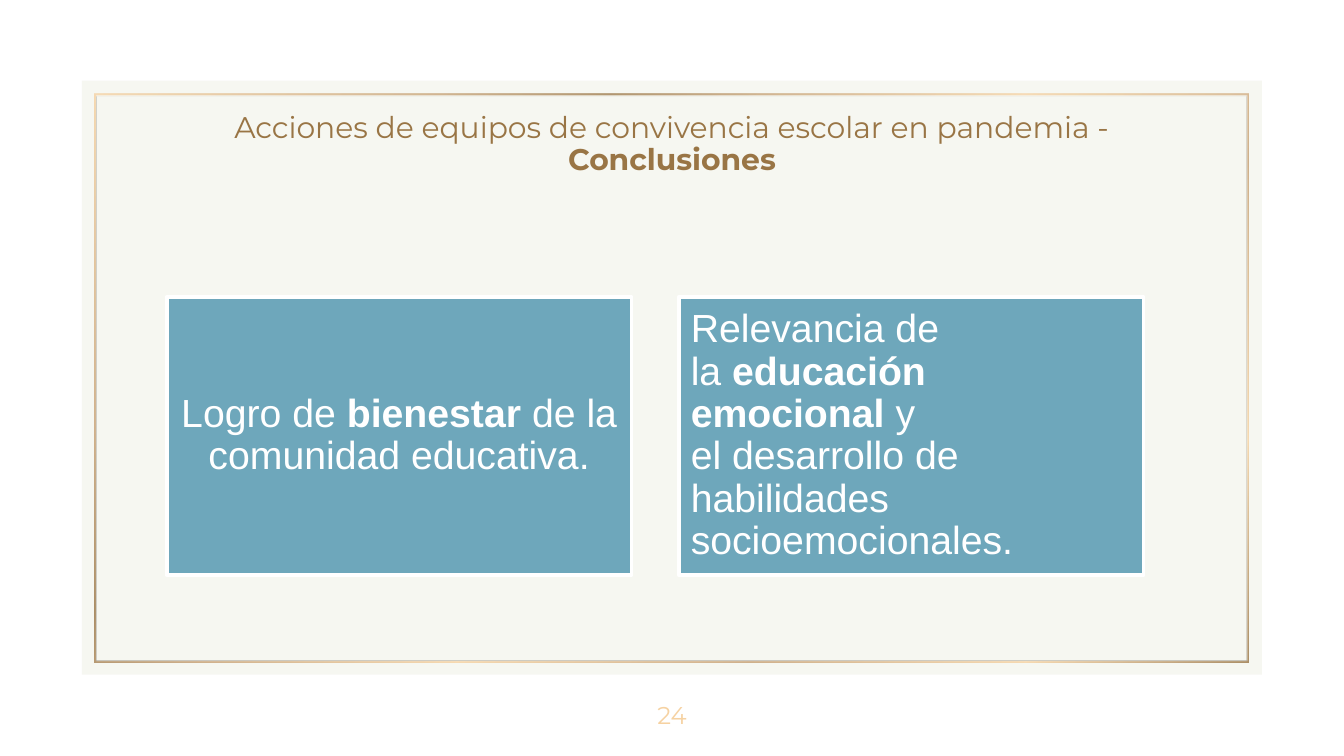
from lxml import etree
from pptx import Presentation
from pptx.dml.color import RGBColor
from pptx.enum.shapes import MSO_SHAPE
from pptx.enum.text import MSO_ANCHOR, PP_ALIGN
from pptx.oxml.ns import qn
from pptx.util import Inches, Pt

RECTANGLE, FRAME = MSO_SHAPE.RECTANGLE, MSO_SHAPE.FRAME
LEFT, CENTER = PP_ALIGN.LEFT, PP_ALIGN.CENTER
MIDDLE = MSO_ANCHOR.MIDDLE
NBSP = chr(160)  # no-break space, keeps short words with their neighbour

COLORS = {
    "panel": "F5F6F0",
    "light_gold": "F6D2A2",
    "gold": "C59F72",
    "dark_gold": "997545",
    "card": "6EA7BB",
    "white": "FFFFFF",
}

# Content: each run is (text, bold)
TITLE = [("Acciones de equipos de convivencia escolar en pandemia - ", False),
         ("Conclusiones", True)]
PAGE_NUMBER = [("24", False)]
CONCLUSIONS = [
    (CENTER, [(f"Logro de{NBSP}", False), (f"bienestar{NBSP}", True),
              ("de la comunidad educativa.", False)]),
    (LEFT, [(f"Relevancia de la{NBSP}", False),
            (f"educación emocional{NBSP}", True),
            (f"y el{NBSP}desarrollo de habilidades socioemocionales.", False)]),
]
GOLD_STOPS = [(0, "light_gold"), (20, "gold"), (30, "dark_gold"), (39, "gold"),
              (54, "light_gold"), (71, "gold"), (87, "light_gold"),
              (100, "dark_gold")]

# Layout in inches, on a 16:9 slide
SLIDE_WIDTH = 10
SLIDE_HEIGHT = SLIDE_WIDTH * 9 / 16
CARD_LEFT, CARD_TOP, CARD_WIDTH, CARD_HEIGHT = 1.24, 2.21, 3.46, 2.07
CARD_GAP = 0.35


def add_color(parent, name, opacity):
    color = etree.SubElement(parent, qn("a:srgbClr"), val=COLORS[name])
    etree.SubElement(color, qn("a:alpha"), val=str(opacity * 1000))


def add_block(slide, kind, box, fill=None):
    block = slide.shapes.add_shape(kind, *map(Inches, box))
    block.shadow.inherit = False
    block.line.fill.background()
    if fill:
        block.fill.solid()
        block.fill.fore_color.rgb = RGBColor.from_string(COLORS[fill])
    return block


def write_text(frame, runs, *, size, font, color, align=CENTER, spacing=None,
               margin=0):
    frame.word_wrap = True
    frame.vertical_anchor = MIDDLE
    frame.margin_left = frame.margin_right = Inches(margin)
    frame.margin_top = frame.margin_bottom = Inches(margin)
    paragraph = frame.paragraphs[0]
    paragraph.alignment = align
    paragraph.line_spacing = spacing
    for text, bold in runs:
        run = paragraph.add_run()
        run.text = text
        run.font.size = Pt(size)
        run.font.name = font
        run.font.bold = bold
        run.font.color.rgb = RGBColor.from_string(COLORS[color])


prs = Presentation()
prs.slide_width, prs.slide_height = Inches(SLIDE_WIDTH), Inches(SLIDE_HEIGHT)
slide = prs.slides.add_slide(prs.slide_layouts[6])

# Translucent panel
panel = add_block(slide, RECTANGLE, (0.61, 0.6, 8.78, 4.42), "panel")
panel_fill = panel._element.spPr.find(qn("a:solidFill"))
panel_fill.remove(panel_fill[0])
add_color(panel_fill, "panel", 87)

# Gold frame with a diagonal gradient
border = add_block(slide, FRAME, (0.7, 0.7, 8.59, 4.23))
border.adjustments[0] = 0.004
border.fill.gradient()
gradient = border._element.spPr.find(qn("a:gradFill"))
for child in list(gradient):
    gradient.remove(child)
stops = etree.SubElement(gradient, qn("a:gsLst"))
for position, name in GOLD_STOPS:
    stop = etree.SubElement(stops, qn("a:gs"), pos=str(position * 1000))
    add_color(stop, name, 80)
etree.SubElement(gradient, qn("a:lin"), ang=str(45 * 60000), scaled="0")

# Title and page number
title = slide.shapes.add_textbox(*map(Inches, (1.14, 0.7, 7.72, 0.76)))
write_text(title.text_frame, TITLE, size=16, font="Montserrat",
           color="dark_gold", spacing=0.9)
page_number = slide.shapes.add_textbox(*map(Inches, (4.7, 5.02, 0.6, 0.6)))
write_text(page_number.text_frame, PAGE_NUMBER, size=13, font="Montserrat",
           color="light_gold")

# Conclusion cards
for index, (align, runs) in enumerate(CONCLUSIONS):
    left = CARD_LEFT + index * (CARD_WIDTH + CARD_GAP)
    card = add_block(slide, RECTANGLE,
                     (left, CARD_TOP, CARD_WIDTH, CARD_HEIGHT), "card")
    card.line.color.rgb = RGBColor.from_string(COLORS["white"])
    card.line.width = Pt(2)
    write_text(card.text_frame, runs, size=21, font="Arial", color="white",
               align=align, spacing=0.9, margin=0.09)

prs.save("out.pptx")
